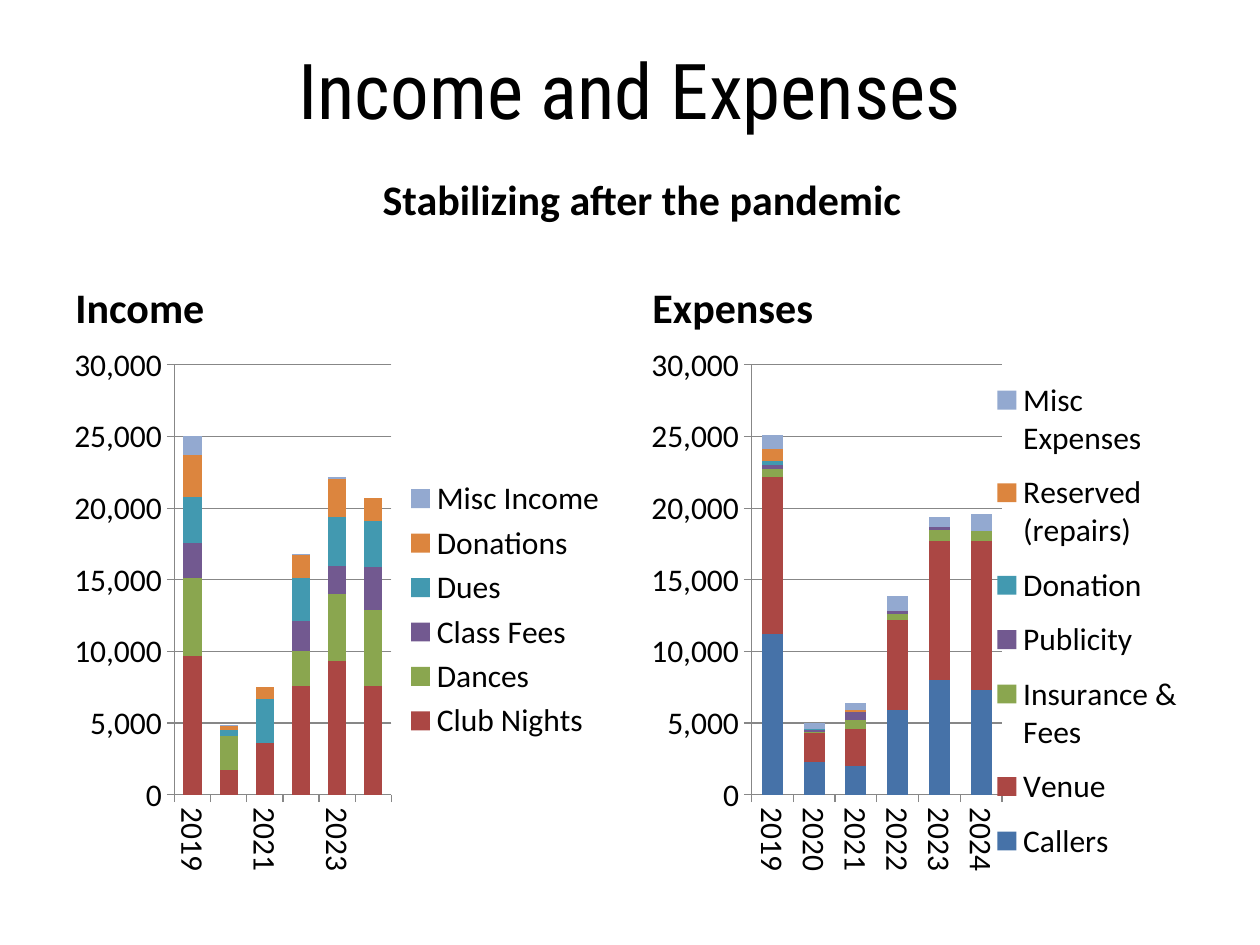
import pptx
import pptx.chart.data
import pptx.dml.color
import pptx.enum.chart
import pptx.enum.text
import pptx.util
from lxml import etree
from pptx.oxml.ns import qn

Inches = pptx.util.Inches
Pt = pptx.util.Pt
RGBColor = pptx.dml.color.RGBColor
Align = pptx.enum.text.PP_ALIGN
Anchor = pptx.enum.text.MSO_ANCHOR

BLACK = RGBColor(0x00, 0x00, 0x00)
GREY = RGBColor(0x87, 0x87, 0x87)
BLUE = RGBColor(0x46, 0x72, 0xA8)
RED = RGBColor(0xAB, 0x47, 0x44)
GREEN = RGBColor(0x8A, 0xA6, 0x4F)
PURPLE = RGBColor(0x72, 0x59, 0x90)
TEAL = RGBColor(0x42, 0x99, 0xB0)
ORANGE = RGBColor(0xDC, 0x85, 0x3E)
PALE_BLUE = RGBColor(0x93, 0xA9, 0xD0)

YEARS = ["2019", "2020", "2021", "2022", "2023", "2024"]
INCOME = [
    ("Club Nights", RED, (9700, 1700, 3600, 7600, 9300, 7600)),
    ("Dances", GREEN, (5400, 2400, 0, 2400, 4700, 5300)),
    ("Class Fees", PURPLE, (2500, 0, 0, 2100, 2000, 3000)),
    ("Dues", TEAL, (3200, 400, 3100, 3000, 3400, 3200)),
    ("Donations", ORANGE, (2900, 300, 800, 1600, 2600, 1600)),
    ("Misc Income", PALE_BLUE, (1300, 100, 0, 100, 200, 0)),
]
EXPENSES = [
    ("Callers", BLUE, (11200, 2300, 2000, 5900, 8000, 7300)),
    ("Venue", RED, (11000, 2000, 2600, 6300, 9700, 10400)),
    ("Insurance & Fees", GREEN, (500, 100, 600, 400, 800, 700)),
    ("Publicity", PURPLE, (300, 100, 600, 200, 200, 0)),
    ("Donation", TEAL, (300, 100, 0, 0, 0, 0)),
    ("Reserved (repairs)", ORANGE, (800, 0, 100, 0, 0, 0)),
    ("Misc Expenses", PALE_BLUE, (1000, 400, 500, 1100, 700, 1200)),
]


class FinanceSlide:
    body_font = "Calibri"
    title_font = "Roboto Condensed"
    heading_size = 24
    chart_size = 18

    def __init__(self, deck):
        self.page = deck.slides.add_slide(deck.slide_layouts[6])

    def text(self, words, left, top, width, height, size=heading_size, font=body_font,
             bold=True, align=Align.LEFT, anchor=Anchor.TOP):
        box = self.page.shapes.add_textbox(
            Inches(left), Inches(top), Inches(width), Inches(height))
        frame = box.text_frame
        frame.word_wrap = True
        frame.vertical_anchor = anchor
        frame.text = words
        para = frame.paragraphs[0]
        para.alignment = align
        span = para.runs[0]
        span.font.name = font
        span.font.size = Pt(size)
        span.font.bold = bold
        span.font.color.rgb = BLACK

    def stacked_chart(self, rows, left, top, width, height, plot_area, legend_area):
        data = pptx.chart.data.CategoryChartData(number_format="#,##0")
        data.categories = YEARS
        for name, _, values in rows:
            data.add_series(name, values)
        chart = self.page.shapes.add_chart(
            pptx.enum.chart.XL_CHART_TYPE.COLUMN_STACKED,
            Inches(left), Inches(top), Inches(width), Inches(height), data).chart
        chart.has_title = False
        chart.font.name = self.body_font
        chart.font.size = Pt(self.chart_size)
        chart.font.color.rgb = BLACK

        plot = chart.plots[0]
        plot.gap_width = 100
        plot.overlap = 100
        plot.vary_by_categories = False
        for series, (_, color, _) in zip(plot.series, rows):
            series.format.fill.solid()
            series.format.fill.fore_color.rgb = color

        chart.has_legend = True
        chart.legend.position = pptx.enum.chart.XL_LEGEND_POSITION.RIGHT
        chart.legend.include_in_layout = False
        self.style_axes(chart)
        self.place(chart._chartSpace.chart.plotArea, 0, plot_area, inner=True)
        if legend_area:
            self.place(chart.legend._element, 1, legend_area)

    def style_axes(self, chart):
        values, years = chart.value_axis, chart.category_axis
        values.minimum_scale, values.maximum_scale = 0, 30000
        values.major_unit = 5000
        values.has_major_gridlines = True
        values.tick_labels.number_format = "#,##0"
        values.tick_labels.number_format_is_linked = False
        for part in (values, years, values.major_gridlines):
            part.format.line.color.rgb = GREY
            part.format.line.width = Pt(0.75)
        for axis in (values, years):
            axis.major_tick_mark = pptx.enum.chart.XL_TICK_MARK.OUTSIDE
            axis.tick_labels.font.size = Pt(self.chart_size)
        # Turn the year labels to read downwards
        label_body = years._element.find(qn("c:txPr")).find(qn("a:bodyPr"))
        label_body.set("rot", "5400000")
        label_body.set("vert", "horz")

    def place(self, element, position, area, inner=False):
        """Fix a chart part at x, y, width, height, as shares of the chart."""
        layout = element.find(qn("c:layout"))
        if layout is None:
            layout = etree.Element(qn("c:layout"))
            element.insert(position, layout)
        manual = etree.SubElement(layout, qn("c:manualLayout"))
        settings = [("layoutTarget", "inner")] if inner else []
        settings += [("xMode", "edge"), ("yMode", "edge"), *zip("xywh", area)]
        for tag, value in settings:
            etree.SubElement(manual, qn("c:" + tag)).set("val", str(value))


def main():
    deck = pptx.Presentation()
    deck.slide_width, deck.slide_height = Inches(10), Inches(7.5)
    slide = FinanceSlide(deck)

    # Title and message
    slide.text("Income and Expenses", 0.5, 0.08, 9, 1.25, size=44,
               font=slide.title_font, bold=False, align=Align.CENTER, anchor=Anchor.MIDDLE)
    slide.text("Stabilizing after the pandemic", 1.93, 1.33, 6.33, 0.5, align=Align.CENTER)

    # Two columns, each a heading above a chart; the long legend gets a fixed area
    columns = [
        ("Income", INCOME, 0.5, 0.39, None),
        ("Expenses", EXPENSES, 5.08, 0.45, (0.67, 0.05, 0.33, 0.94)),
    ]
    for heading, rows, left, plot_width, legend_area in columns:
        slide.text(heading, left, 1.98, 4.42, 0.7, anchor=Anchor.BOTTOM)
        slide.stacked_chart(rows, left, 2.68, 4.42, 4.32,
                            (0.2, 0.05, plot_width, 0.79), legend_area)

    deck.save("out.pptx")


if __name__ == "__main__":
    main()
